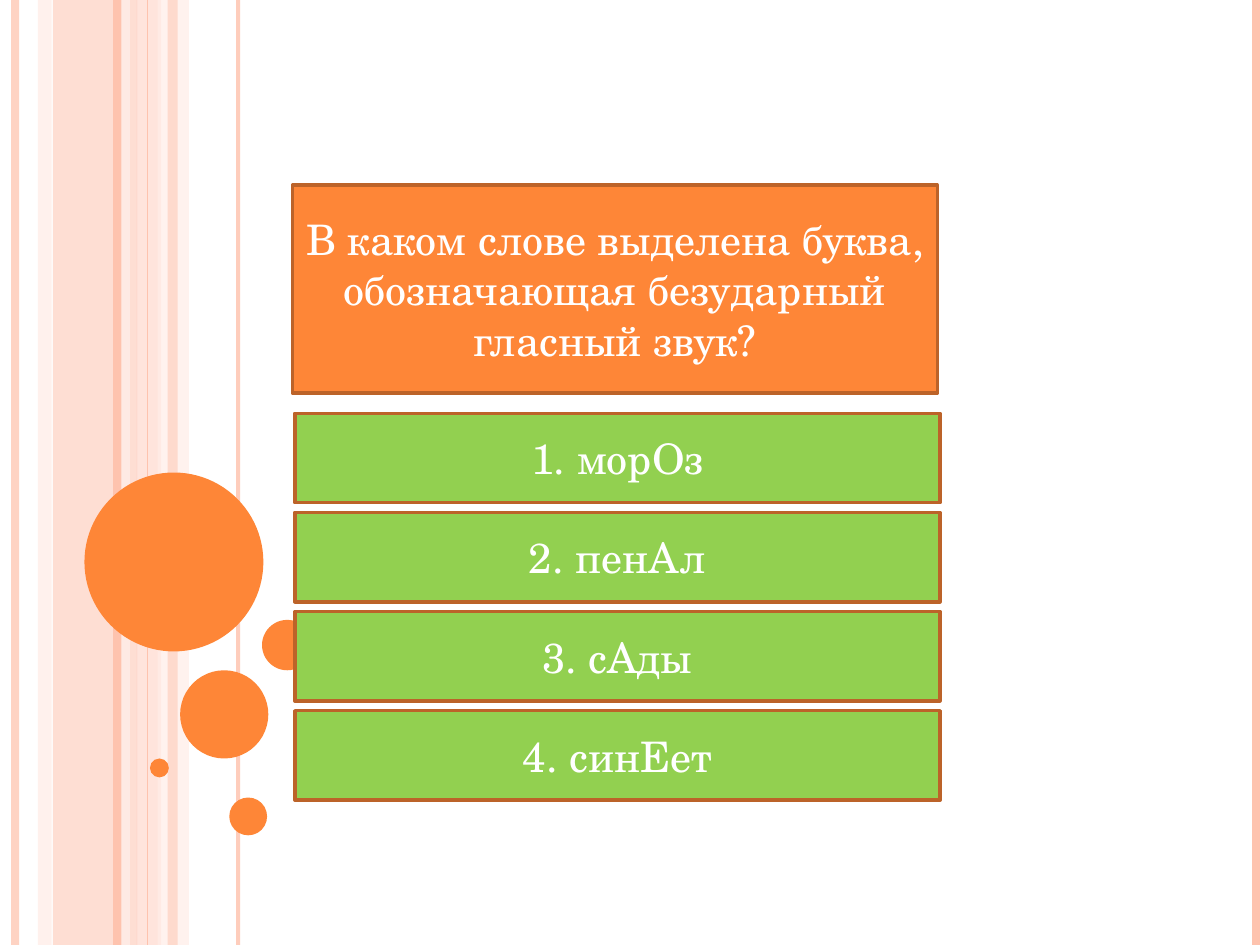
from pptx import Presentation
from pptx.dml.color import RGBColor
from pptx.enum import shapes, text
from pptx.oxml import ns, xmlchemy
from pptx.util import Inches, Pt

THEME = {
    "orange": "FE8637", "green": "92D050", "edge": "BC6329", "white": "FFFFFF",
    "peach": "FEC3AE", "blush": "FFD9CE", "pale": "FFEDE8",
    "font": "TeX Gyre Schola", "size": 24, "border": 2,
}
WIDTH, HEIGHT = 10, 7.5

QUESTION = "В каком слове выделена буква, обозначающая безударный гласный звук?"
ANSWERS = ["морОз", "пенАл", "сАды", "синЕет"]

# left, width, colour, opacity in percent
BANDS = [
    (0.42, 0.67, "peach", 54),
    (0.3, 0.11, "blush", 36),
    (1.08, 0.2, "blush", 70),
    (1.25, 0.25, "pale", 71),
]
TOP_BAND = (1.33, 0.08, "peach", 51)
# x, line width in points, colour, opacity in percent
STRIPES = [
    (0.12, 4.5, "peach", 73),
    (1, 4.5, "pale", 83),
    (0.93, 4.5, "peach", 100),
    (1.89, 2.25, "peach", 82),
    (1.17, 0.75, "peach", 100),
    (9.97, 4.5, "peach", 100),
]
# left, top, diameter
CIRCLES = [
    (0.67, 3.75, 1.42),
    (1.43, 5.32, 0.7),
    (1.19, 6.02, 0.15),
    (1.82, 6.33, 0.3),
    (2.08, 4.92, 0.4),
]
ASK_BOX = (2.32, 1.47, 5.12, 1.65)
FIRST_BOX = (2.34, 3.28, 5.12, 0.71)
LAST_TOP = 5.64


def color(name):
    return RGBColor.from_string(THEME[name])


def fade(shape, opacity):
    """Make every colour of the shape partly transparent."""
    if opacity < 100:
        for tag in shape._element.spPr.iter(ns.qn("a:srgbClr")):
            alpha = xmlchemy.OxmlElement("a:alpha")
            alpha.set("val", str(opacity * 1000))
            tag.append(alpha)


def add_shape(slide, kind, box, fill, opacity=100):
    shape = slide.shapes.add_shape(kind, *map(Inches, box))
    shape.shadow.inherit = False
    shape.fill.solid()
    shape.fill.fore_color.rgb = color(fill)
    shape.line.fill.background()
    fade(shape, opacity)
    return shape


def add_band(slide, left, width, fill, opacity):
    kind = shapes.MSO_SHAPE.RECTANGLE
    add_shape(slide, kind, (left, 0, width, HEIGHT), fill, opacity)


def add_stripe(slide, x, weight, name, opacity):
    stripe = slide.shapes.add_connector(
        shapes.MSO_CONNECTOR.STRAIGHT, Inches(x), 0, Inches(x), Inches(HEIGHT))
    stripe.line.color.rgb = color(name)
    stripe.line.width = Pt(weight)
    fade(stripe, opacity)
    stripe._element.spPr.append(xmlchemy.OxmlElement("a:effectLst"))


def write(shape, words, size=THEME["size"], fill="white"):
    """Put centred text in a bordered box."""
    shape.line.color.rgb = color("edge")
    shape.line.width = Pt(THEME["border"])
    frame = shape.text_frame
    frame.word_wrap = True
    frame.auto_size = text.MSO_AUTO_SIZE.NONE
    frame.vertical_anchor = text.MSO_ANCHOR.MIDDLE
    para = frame.paragraphs[0]
    para.alignment = text.PP_ALIGN.CENTER
    run = para.add_run()
    run.text = words
    run.font.name = THEME["font"]
    run.font.size = Pt(size)
    run.font.color.rgb = color(fill)


def add_title(slide):
    title = slide.shapes.title
    title.left, title.top, title.width, title.height = map(Inches, ASK_BOX)
    title.fill.solid()
    title.fill.fore_color.rgb = color("orange")
    write(title, QUESTION)


def main():
    deck = Presentation()
    deck.slide_width, deck.slide_height = Inches(WIDTH), Inches(HEIGHT)
    slide = deck.slides.add_slide(deck.slide_layouts.get_by_name("Title Only"))

    for band in BANDS:
        add_band(slide, *band)
    for stripe in STRIPES:
        add_stripe(slide, *stripe)
    add_band(slide, *TOP_BAND)
    for left, top, size in CIRCLES:
        add_shape(slide, shapes.MSO_SHAPE.OVAL, (left, top, size, size), "orange")

    add_title(slide)
    left, top, width, height = FIRST_BOX
    step = (LAST_TOP - top) / (len(ANSWERS) - 1)
    for i, answer in enumerate(ANSWERS):
        box = (left, top + i * step, width, height)
        shape = add_shape(slide, shapes.MSO_SHAPE.RECTANGLE, box, "green")
        write(shape, f"{i + 1}. {answer}")

    deck.save("out.pptx")


if __name__ == "__main__":
    main()
